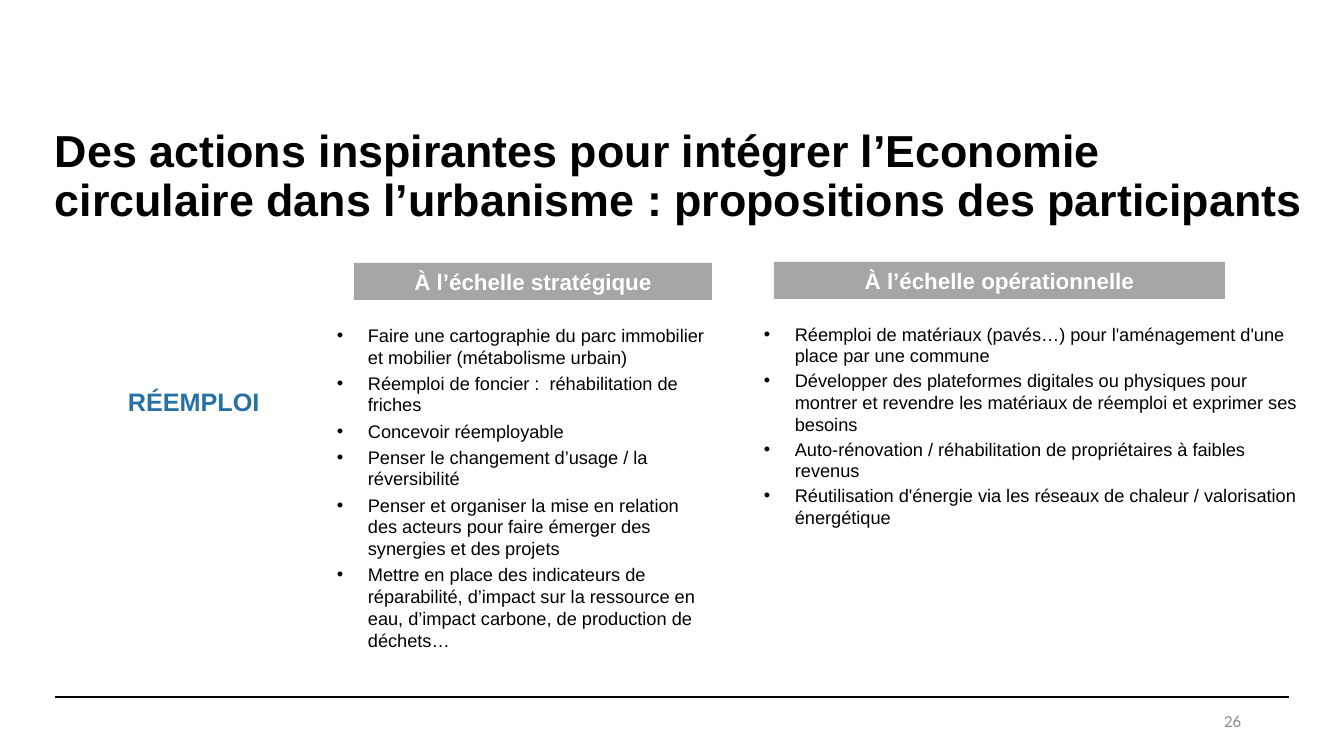
"""Build the slide on reuse actions for a circular economy in urban planning."""
from dataclasses import dataclass, field
from typing import Any

from lxml import etree
from pptx import Presentation, util as u
from pptx.dml import color
from pptx.enum import shapes, text
from pptx.oxml import ns

PX = 914400 / 100.8
INDENT = 31
COLOURS = {
    "ink": "000000",
    "paper": "FFFFFF",
    "band": "A6A6A6",
    "theme": "2771A4",
    "page": "8C8C8C",
}


@dataclass(frozen=True)
class Block:
    """A block of text with its box in px and its format values."""

    box: tuple[int, int, int, int]
    lines: tuple[str, ...]
    size: int
    ink: str = "ink"
    bold: bool = False
    face: str = "Arial"
    fill: str | None = None
    bullet: str | None = None
    frame: dict[str, Any] = field(default_factory=dict)
    paragraph: dict[str, Any] = field(default_factory=dict)


def px(length: int) -> int:
    """Turn px into EMU."""
    return round(length * PX)


def rgb(name: str) -> color.RGBColor:
    """Look up a named colour."""
    return color.RGBColor.from_string(COLOURS[name])


def apply(target: Any, values: dict[str, Any]) -> None:
    """Set each format value on the target."""
    for name, value in values.items():
        setattr(target, name, value)


def add_bullet(paragraph: Any, mark: str, ink: str) -> None:
    """Give a paragraph a hanging bullet."""
    props = paragraph._p.get_or_add_pPr()
    props.set("marL", str(px(INDENT)))
    props.set("indent", str(-px(INDENT)))
    tint = etree.SubElement(props, ns.qn("a:buClr"))
    etree.SubElement(tint, ns.qn("a:srgbClr"), val=COLOURS[ink])
    etree.SubElement(props, ns.qn("a:buFont"), typeface="Arial")
    etree.SubElement(props, ns.qn("a:buChar"), char=mark)


def draw_block(slide: Any, block: Block) -> None:
    """Draw one block of text, on a filled band if it has a fill."""
    box = [px(length) for length in block.box]
    if block.fill:
        holder = slide.shapes.add_shape(shapes.MSO_SHAPE.RECTANGLE, *box)
        holder.shadow.inherit = False
        holder.fill.solid()
        holder.fill.fore_color.rgb = rgb(block.fill)
        holder.line.fill.background()
    else:
        holder = slide.shapes.add_textbox(*box)
    frame = holder.text_frame
    apply(frame, {"word_wrap": True, "vertical_anchor": text.MSO_ANCHOR.TOP} | block.frame)
    for index, line in enumerate(block.lines):
        paragraph = frame.add_paragraph() if index else frame.paragraphs[0]
        if block.bullet:
            add_bullet(paragraph, block.bullet, block.ink)
        apply(paragraph, block.paragraph)
        run = paragraph.add_run()
        run.text = line
        apply(run.font, {"name": block.face, "size": u.Pt(block.size), "bold": block.bold})
        run.font.color.rgb = rgb(block.ink)


def draw_rule(slide: Any, left: int, right: int, top: int) -> None:
    """Draw the horizontal rule above the page number."""
    rule = slide.shapes.add_connector(
        shapes.MSO_CONNECTOR.STRAIGHT, px(left), px(top), px(right), px(top)
    )
    rule.line.width = u.Pt(1.5)
    rule.line.color.rgb = rgb("ink")
    etree.SubElement(rule._element.spPr, ns.qn("a:effectLst"))


GROW = {"auto_size": text.MSO_AUTO_SIZE.SHAPE_TO_FIT_TEXT}
BAND = {
    "size": 16,
    "ink": "paper",
    "bold": True,
    "fill": "band",
    "frame": GROW,
    "paragraph": {"alignment": text.PP_ALIGN.CENTER},
}
ACTIONS = {"size": 13, "bullet": "•", "frame": GROW}

BLOCKS = (
    Block(
        (45, 85, 1270, 146),
        (
            "Des actions inspirantes pour intégrer l’Economie circulaire "
            "dans l’urbanisme : propositions des participants",
        ),
        32,
        bold=True,
        frame={"vertical_anchor": text.MSO_ANCHOR.BOTTOM},
        paragraph={"line_spacing": 0.9},
    ),
    Block((354, 263, 358, 37), ("À l’échelle stratégique",), **BAND),
    Block((774, 262, 451, 37), ("À l’échelle opérationnelle",), **BAND),
    Block((118, 381, 160, 40), ("RÉEMPLOI",), 18, ink="theme", bold=True, frame=GROW),
    Block(
        (327, 319, 393, 340),
        (
            "Faire une cartographie du parc immobilier et mobilier (métabolisme urbain)",
            "Réemploi de foncier :  réhabilitation de friches",
            "Concevoir réemployable",
            "Penser le changement d’usage / la réversibilité",
            "Penser et organiser la mise en relation des acteurs pour faire "
            "émerger des synergies et des projets",
            "Mettre en place des indicateurs de réparabilité, d’impact sur la "
            "ressource en eau, d’impact carbone, de production de déchets…",
        ),
        paragraph={"space_after": u.Pt(3)},
        **ACTIONS,
    ),
    Block(
        (754, 318, 561, 217),
        (
            "Réemploi de matériaux (pavés…) pour l'aménagement d'une place par une commune",
            "Développer des plateformes digitales ou physiques pour montrer et "
            "revendre les matériaux de réemploi et exprimer ses besoins",
            "Auto-rénovation / réhabilitation de propriétaires à faibles revenus",
            "Réutilisation d'énergie via les réseaux de chaleur / valorisation énergétique",
        ),
        paragraph={"space_after": u.Pt(2)},
        **ACTIONS,
    ),
    Block(
        (949, 701, 302, 40),
        ("26",),
        12,
        ink="page",
        face="Calibri",
        frame={"vertical_anchor": text.MSO_ANCHOR.MIDDLE},
        paragraph={"alignment": text.PP_ALIGN.RIGHT},
    ),
)


def main() -> None:
    """Build and save the slide."""
    deck = Presentation()
    apply(deck, {"slide_width": px(1344), "slide_height": px(756)})
    slide = deck.slides.add_slide(deck.slide_layouts[6])
    draw_rule(slide, 55, 1289, 697)
    for block in BLOCKS:
        draw_block(slide, block)
    deck.save("out.pptx")


if __name__ == "__main__":
    main()
